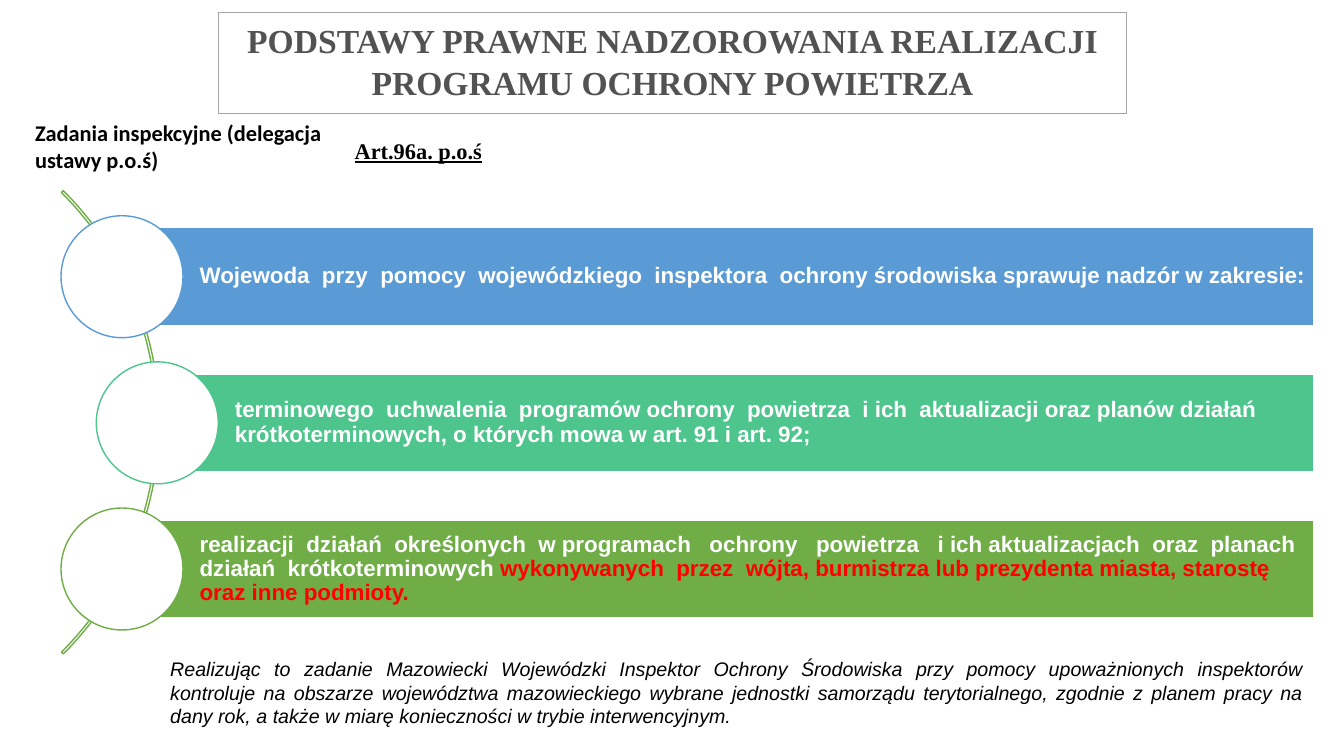
from dataclasses import dataclass

from lxml.etree import SubElement
from pptx import Presentation
from pptx.dml.color import RGBColor
from pptx.enum.shapes import MSO_SHAPE
from pptx.enum.text import MSO_ANCHOR, MSO_AUTO_SIZE, PP_ALIGN
from pptx.oxml.ns import qn
from pptx.shapes.autoshape import Shape
from pptx.slide import Slide
from pptx.util import Inches, Pt


@dataclass(frozen=True)
class Theme:
    white: str = "FFFFFF"
    black: str = "000000"
    red: str = "FF0000"
    blue: str = "5B9BD5"
    teal: str = "4DC58D"
    green: str = "70AD47"
    title_text: str = "525252"
    title_outline: str = "7C7C7C"
    title_border: str = "A5A5A5"
    serif: str = "Times New Roman"
    sans: str = "Arial"
    label: str = "Calibri"
    title_size: int = 24
    body_size: int = 16
    note_size: int = 14


THEME = Theme()


@dataclass(frozen=True)
class Passage:
    text: str
    color: str = THEME.black
    font: str = THEME.sans
    size: int = THEME.body_size
    bold: bool = False
    italic: bool = False
    underline: bool = False


@dataclass(frozen=True)
class Task:
    left: float
    color: str
    passages: tuple[Passage, ...]


@dataclass(frozen=True)
class Caption:
    box: tuple[float, float, float, float]
    passage: Passage
    align: PP_ALIGN


TITLE = Passage(
    "PODSTAWY PRAWNE NADZOROWANIA REALIZACJI PROGRAMU OCHRONY POWIETRZA",
    THEME.title_text, THEME.serif, THEME.title_size, bold=True,
)
TASKS = (
    Task(1.21, THEME.blue, (
        Passage("Wojewoda  przy  pomocy  wojewódzkiego  inspektora  ochrony "
                "środowiska sprawuje nadzór w zakresie:", THEME.white, bold=True),
    )),
    Task(1.56, THEME.teal, (
        Passage("terminowego  uchwalenia  programów ochrony  powietrza  i ich  "
                "aktualizacji oraz planów działań krótkoterminowych, o których "
                "mowa w art. 91 i art. 92;", THEME.white, bold=True),
    )),
    Task(1.21, THEME.green, (
        Passage("realizacji  działań  określonych  w programach   ochrony   "
                "powietrza   i ich aktualizacjach  oraz  planach  działań  "
                "krótkoterminowych ", THEME.white, bold=True),
        Passage("wykonywanych  przez  wójta, burmistrza lub prezydenta miasta, "
                "starostę oraz inne podmioty.", THEME.red, bold=True),
    )),
)
CAPTIONS = (
    Caption((3.42, 1.31, 2.2, 0.37),
            Passage("Art.96a. p.o.ś", font=THEME.serif, bold=True, underline=True),
            PP_ALIGN.JUSTIFY),
    Caption((0.25, 1.13, 3.56, 0.64),
            Passage("Zadania inspekcyjne (delegacja ustawy p.o.ś)",
                    font=THEME.label, bold=True),
            PP_ALIGN.LEFT),
    Caption((1.59, 6.47, 11.44, 0.81),
            Passage("Realizując to zadanie Mazowiecki Wojewódzki Inspektor Ochrony "
                    "Środowiska przy pomocy upoważnionych inspektorów kontroluje na "
                    "obszarze województwa mazowieckiego wybrane jednostki samorządu "
                    "terytorialnego, zgodnie z planem pracy na dany rok, a także w "
                    "miarę konieczności w trybie interwencyjnym.",
                    size=THEME.note_size, italic=True),
            PP_ALIGN.JUSTIFY),
)
FIRST_BAR_TOP = 2.26
BAR_PITCH = 1.45
BAR_HEIGHT = 0.97
BAR_RIGHT = 13.03
CIRCLE = 1.21


def write(shape: Shape, passages: tuple[Passage, ...], align: PP_ALIGN) -> None:
    paragraph = shape.text_frame.paragraphs[0]
    paragraph.alignment = align
    for passage in passages:
        run = paragraph.add_run()
        run.text = passage.text
        font = run.font
        font.name = passage.font
        font.size = Pt(passage.size)
        font.bold = passage.bold
        font.italic = passage.italic
        font.underline = passage.underline
        font.color.rgb = RGBColor.from_string(passage.color)


def add_figure(slide: Slide, kind: MSO_SHAPE, box: tuple[float, float, float, float],
               fill: str | None, line: str) -> Shape:
    figure = slide.shapes.add_shape(kind, *map(Inches, box))
    figure.shadow.inherit = False
    if fill:
        figure.fill.solid()
        figure.fill.fore_color.rgb = RGBColor.from_string(fill)
    else:
        figure.fill.background()
    figure.line.color.rgb = RGBColor.from_string(line)
    figure.line.width = Pt(1)
    return figure


def add_title(slide: Slide) -> None:
    title = slide.shapes.title
    title.left, title.top, title.width, title.height = map(Inches, (2.17, 0.12, 9, 1.01))
    title.fill.solid()
    title.fill.fore_color.rgb = RGBColor.from_string(THEME.white)
    title.line.color.rgb = RGBColor.from_string(THEME.title_border)
    title.line.width = Pt(0.5)
    frame = title.text_frame
    frame.word_wrap = True
    frame.auto_size = MSO_AUTO_SIZE.NONE
    frame.vertical_anchor = MSO_ANCHOR.TOP
    write(title, (TITLE,), PP_ALIGN.CENTER)
    paragraph = frame.paragraphs[0]
    paragraph.line_spacing = 1.06
    properties = paragraph.runs[0].font._element
    outline = SubElement(properties, qn("a:ln"), w=str(Pt(0.83)))
    SubElement(SubElement(outline, qn("a:solidFill")), qn("a:srgbClr"),
               val=THEME.title_outline)
    properties.insert(0, outline)


def add_arc(slide: Slide) -> None:
    arc = add_figure(slide, MSO_SHAPE.BLOCK_ARC, (-4.92, 0.94, 6.5, 6.5), None, THEME.green)
    for index, value in enumerate((189, 27, 0.004)):
        arc.adjustments[index] = value


def add_task(slide: Slide, task: Task, top: float) -> None:
    bar = add_figure(slide, MSO_SHAPE.RECTANGLE,
                     (task.left, top, BAR_RIGHT - task.left, BAR_HEIGHT),
                     task.color, THEME.white)
    frame = bar.text_frame
    frame.word_wrap = True
    frame.vertical_anchor = MSO_ANCHOR.MIDDLE
    frame.margin_left = Inches(0.77)
    frame.margin_top = frame.margin_right = frame.margin_bottom = Inches(0.04)
    write(bar, task.passages, PP_ALIGN.LEFT)
    frame.paragraphs[0].line_spacing = 0.9
    add_figure(slide, MSO_SHAPE.OVAL,
               (task.left - CIRCLE / 2, top + (BAR_HEIGHT - CIRCLE) / 2, CIRCLE, CIRCLE),
               THEME.white, task.color)


def add_caption(slide: Slide, caption: Caption) -> None:
    textbox = slide.shapes.add_textbox(*map(Inches, caption.box))
    textbox.text_frame.word_wrap = True
    textbox.text_frame.auto_size = MSO_AUTO_SIZE.SHAPE_TO_FIT_TEXT
    write(textbox, (caption.passage,), caption.align)


def main() -> None:
    presentation = Presentation()
    presentation.slide_width = Inches(13.33)
    presentation.slide_height = Inches(7.5)
    slide = presentation.slides.add_slide(presentation.slide_layouts.get_by_name("Title Only"))
    add_title(slide)
    add_arc(slide)
    for row, task in enumerate(TASKS):
        add_task(slide, task, FIRST_BAR_TOP + row * BAR_PITCH)
    for caption in CAPTIONS:
        add_caption(slide, caption)
    presentation.save("out.pptx")


if __name__ == "__main__":
    main()
